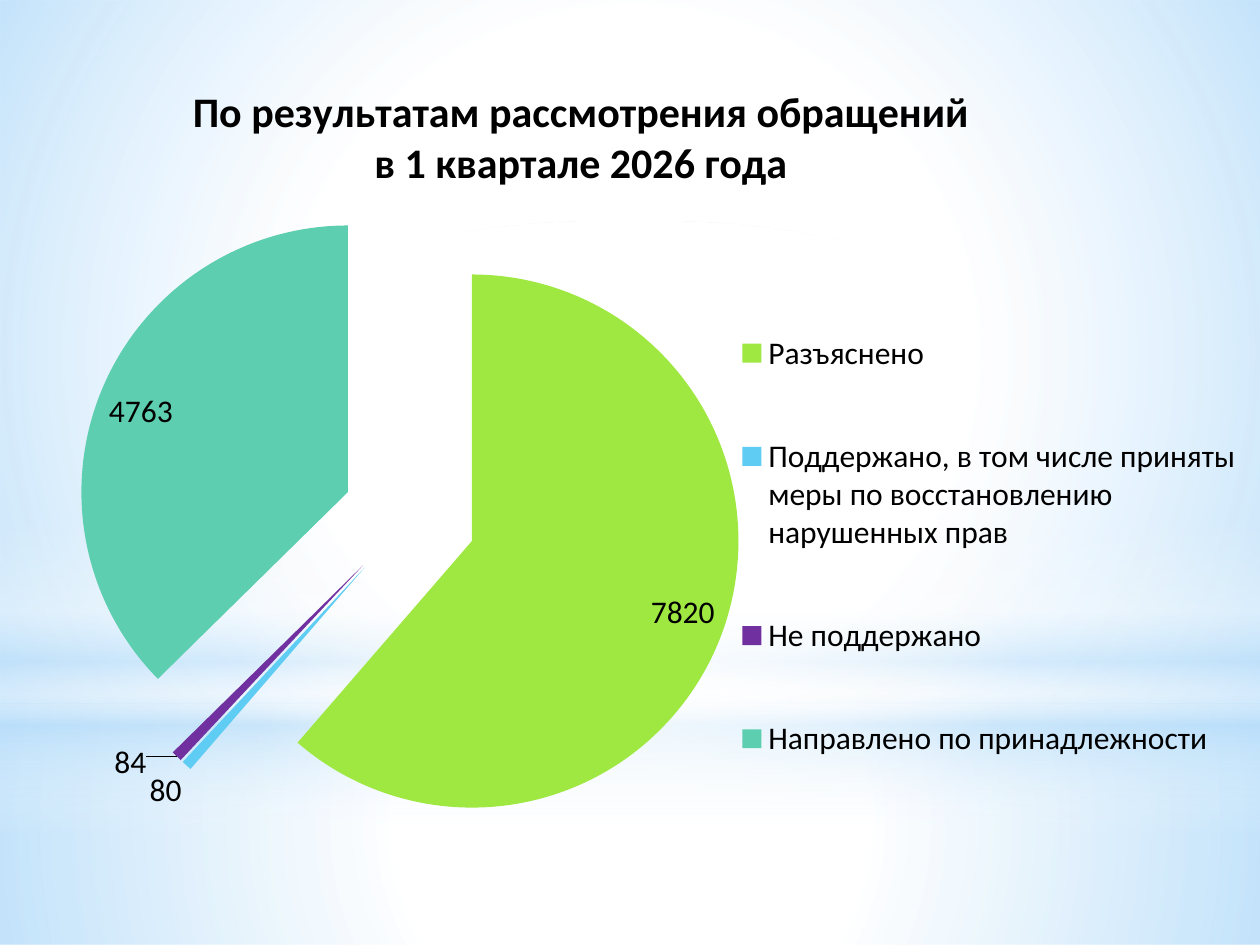
"""Build a slide with an exploded pie chart of appeal outcomes."""
from dataclasses import dataclass

from pptx import Presentation
from pptx.chart.data import CategoryChartData
from pptx.dml.color import RGBColor
from pptx.enum.chart import XL_CHART_TYPE, XL_LABEL_POSITION, XL_LEGEND_POSITION
from pptx.enum.shapes import MSO_SHAPE
from pptx.oxml import parse_xml
from pptx.oxml.ns import nsdecls, qn
from pptx.util import Pt


@dataclass(frozen=True)
class Theme:
    """Colours, fonts and type sizes of the slide."""
    white: str = "FFFFFF"
    sky: str = "B4DCFA"
    text: str = "000000"
    font: str = "Calibri"
    chart_font: str = "Cabin"
    title_size: int = 24
    body_size: int = 18


THEME = Theme()
OUTSIDE, INSIDE = XL_LABEL_POSITION.OUTSIDE_END, XL_LABEL_POSITION.INSIDE_END
OUTCOMES = [
    ("Разъяснено", 7820, "9FE842", INSIDE),
    ("Поддержано, в том числе приняты меры по восстановлению нарушенных прав",
     80, "5ECCF3", OUTSIDE),
    ("Не поддержано", 84, "7030A0", OUTSIDE),
    ("Направлено по принадлежности", 4763, "5DCEAF", INSIDE),
]


def format_font(font, size=THEME.body_size, bold=False, name=THEME.font):
    """Apply the theme's type settings to a font."""
    font.name, font.size, font.bold = name, Pt(size), bold
    font.color.rgb = RGBColor.from_string(THEME.text)


def write_text(tf, lines, **fmt):
    """Write one paragraph per line in the given format."""
    for i, line in enumerate(lines):
        p = tf.add_paragraph() if i else tf.paragraphs[0]
        r = p.add_run()
        r.text = line
        format_font(r.font, **fmt)


def add_glow(s, shape, box, stops, angle=None):
    """Add a borderless shape with a radial or angled translucent gradient."""
    sp = s.shapes.add_shape(shape, *map(Pt, box))
    sp.shadow.inherit = False
    sp.line.fill.background()
    sp.fill.background()
    gs = "".join(
        f'<a:gs pos="{pos * 1000}"><a:srgbClr val="{color}">'
        f'<a:alpha val="{alpha * 1000}"/></a:srgbClr></a:gs>'
        for pos, color, alpha in stops)
    if angle is None:
        way = ('<a:path path="circle"><a:fillToRect l="50000" t="50000" '
               'r="50000" b="50000"/></a:path>')
    else:
        way = f'<a:lin ang="{angle * 60000}" scaled="0"/>'
    grad = parse_xml(f'<a:gradFill {nsdecls("a")} rotWithShape="1">'
                     f'<a:gsLst>{gs}</a:gsLst>{way}</a:gradFill>')
    spPr = sp._element.spPr
    spPr.replace(spPr.find(qn("a:noFill")), grad)


def add_background(s):
    """Layer the sky glows behind the chart."""
    white, sky = THEME.white, THEME.sky
    rect = MSO_SHAPE.RECTANGLE
    add_glow(s, rect, (0, 402, 720, 138),
             [(0, white, 91), (37, white, 76), (100, sky, 79)])
    add_glow(s, rect, (0, 0, 720, 402),
             [(0, white, 89), (48, white, 62), (100, sky, 79)])
    add_glow(s, rect, (0, 297, 720, 180),
             [(0, white, 0), (29, white, 30), (45, sky, 40),
              (55, white, 26), (65, sky, 60), (100, white, 0)], angle=90)
    add_glow(s, MSO_SHAPE.OVAL, (0, 126, 720, 402),
             [(0, white, 100), (56, white, 0)])


def set_layout(parent, index, **values):
    """Give a chart part a manual layout as its child at the index."""
    for old in parent.findall(qn("c:layout")):
        parent.remove(old)
    items = "".join(f'<c:{tag} val="{val}"/>' for tag, val in values.items())
    parent.insert(index, parse_xml(
        f'<c:layout {nsdecls("c")}><c:manualLayout>{items}'
        '</c:manualLayout></c:layout>'))


def format_title(chart):
    """Write and place the chart title."""
    chart.has_title = True
    title = chart.chart_title
    write_text(title.text_frame, ["По результатам рассмотрения обращений",
                                  "в 1 квартале 2026 года"],
               size=THEME.title_size, bold=True)
    set_layout(title._element, 1, xMode="edge", yMode="edge", x=0.15, y=0.08)
    title._element.find(qn("c:overlay")).set("val", "1")


def format_legend(chart):
    """Place the legend to the right of the pie."""
    chart.has_legend = True
    legend = chart.legend
    legend.position = XL_LEGEND_POSITION.RIGHT
    legend.include_in_layout = False
    format_font(legend.font)
    set_layout(legend._element, 1, xMode="edge", yMode="edge",
               x=0.58, y=0.28, w=0.41, h=0.59)


def format_slices(plot):
    """Colour, explode and label the slices."""
    plot.vary_by_categories = True
    ser = plot.series[0]
    ser._element.find(qn("c:tx")).addnext(
        parse_xml(f'<c:explosion {nsdecls("c")} val="25"/>'))
    labels = ser.data_labels
    labels.show_value = True
    format_font(labels.font)
    leader = labels._element.find(qn("c:showLeaderLines"))
    if leader is None:
        leader = parse_xml(f'<c:showLeaderLines {nsdecls("c")}/>')
        labels._element.append(leader)
    leader.set("val", "1")
    for i, (_, _, color, position) in enumerate(OUTCOMES):
        point = ser.points[i]
        point.format.fill.solid()
        point.format.fill.fore_color.rgb = RGBColor.from_string(color)
        point.format.line.fill.background()
        format_font(point.data_label.font)
        point.data_label.position = position
    rejected = labels._element.findall(qn("c:dLbl"))[2]
    set_layout(rejected, 1, x=-0.02, y=-0.02)


def add_pie(s):
    """Add the pie chart of outcomes."""
    data = CategoryChartData()
    data.categories = [name for name, *_ in OUTCOMES]
    data.add_series("Series 1", [value for _, value, *_ in OUTCOMES])
    chart = s.shapes.add_chart(XL_CHART_TYPE.PIE, Pt(0), Pt(3.6), Pt(720),
                               Pt(536.4), data).chart
    format_font(chart.font, name=THEME.chart_font)
    format_title(chart)
    format_legend(chart)
    format_slices(chart.plots[0])
    plot_area = chart._chartSpace.chart.plotArea
    set_layout(plot_area, 0, layoutTarget="inner", xMode="edge", yMode="edge",
               x=0.06, y=0.19, w=0.53, h=0.71)


def main():
    """Build and save the slide."""
    prs = Presentation()
    prs.slide_width, prs.slide_height = Pt(720), Pt(540)
    s = prs.slides.add_slide(prs.slide_layouts[6])
    add_background(s)
    add_pie(s)
    prs.save("out.pptx")


if __name__ == "__main__":
    main()
